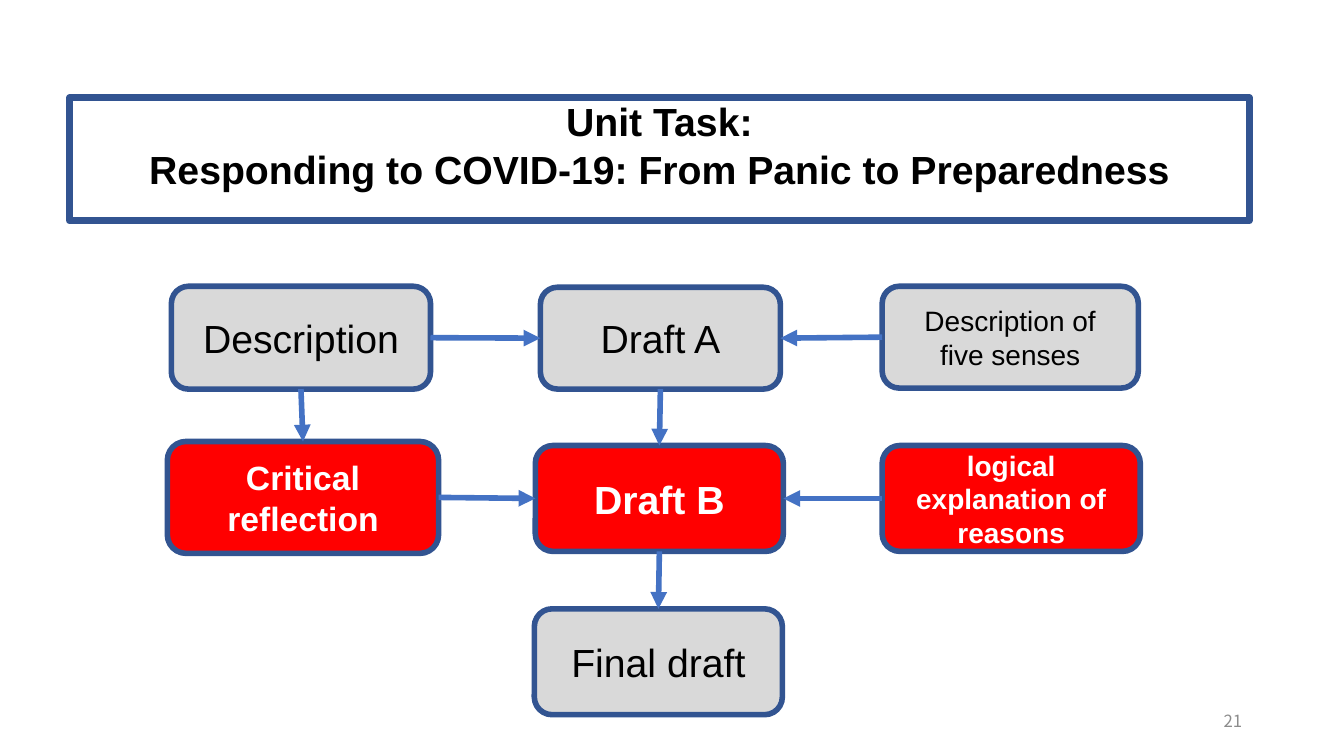
from lxml.etree import SubElement
from pptx import Presentation
from pptx.dml.color import RGBColor
from pptx.enum.shapes import MSO_CONNECTOR, MSO_SHAPE
from pptx.enum.text import MSO_ANCHOR, MSO_AUTO_SIZE, PP_ALIGN
from pptx.oxml.ns import qn
from pptx.util import Inches, Pt

WHITE = RGBColor(0xFF, 0xFF, 0xFF)
BLACK = RGBColor(0, 0, 0)
GREY = RGBColor(0xD9, 0xD9, 0xD9)
RED = RGBColor(0xFF, 0, 0)
NAVY = RGBColor(0x32, 0x54, 0x91)
BLUE = RGBColor(0x44, 0x72, 0xC4)
NUMBER_GREY = RGBColor(0x8C, 0x8C, 0x8C)
TOP, LEFT, BOTTOM, RIGHT = range(4)


def write(shape, text, size=28, color=BLACK, bold=False, font="Arial",
          align=PP_ALIGN.CENTER, anchor=MSO_ANCHOR.MIDDLE):
    frame = shape.text_frame
    frame.word_wrap = True
    frame.auto_size = MSO_AUTO_SIZE.NONE
    frame.vertical_anchor = anchor
    frame.text = text
    for paragraph in frame.paragraphs:
        paragraph.alignment = align
        paragraph.font.name = font
        paragraph.font.size = Pt(size)
        paragraph.font.bold = bold
        paragraph.font.color.rgb = color


class FlowSlide:
    def __init__(self, deck):
        self.slide = deck.slides.add_slide(deck.slide_layouts[5])
        self.shapes = self.slide.shapes

    def paint(self, shape, fill, width):
        shape.fill.solid()
        shape.fill.fore_color.rgb = fill
        shape.line.color.rgb = NAVY
        shape.line.width = Pt(width)

    def title(self, text, left, top, width, height):
        """Turn the title placeholder into a rounded, translucent banner."""
        banner = self.shapes.title
        banner.left, banner.top = Inches(left), Inches(top)
        banner.width, banner.height = Inches(width), Inches(height)
        properties = banner._element.spPr
        geometry = SubElement(properties, qn("a:prstGeom"), prst="roundRect")
        guides = SubElement(geometry, qn("a:avLst"))
        SubElement(guides, qn("a:gd"), name="adj", fmla="val 14500")
        self.paint(banner, WHITE, 5)
        tint = properties.find(qn("a:solidFill"))[0]
        SubElement(tint, qn("a:alpha"), val="41000")
        write(banner, text, bold=True, anchor=MSO_ANCHOR.TOP)
        banner.text_frame.margin_top = 0
        banner.text_frame.margin_bottom = Inches(0.31)

    def box(self, text, left, top, width, height, size=28, key=False):
        """Add a step of the flow; key steps are red with bold white text."""
        step = self.shapes.add_shape(
            MSO_SHAPE.ROUNDED_RECTANGLE,
            Inches(left), Inches(top), Inches(width), Inches(height))
        step.shadow.inherit = False
        self.paint(step, RED if key else GREY, 4)
        write(step, text, size=size, color=WHITE if key else BLACK, bold=key)
        return step

    def arrow(self, start, start_side, end, end_side):
        link = self.shapes.add_connector(MSO_CONNECTOR.STRAIGHT, 0, 0, 0, 0)
        link.begin_connect(start, start_side)
        link.end_connect(end, end_side)
        link.line.color.rgb = BLUE
        link.line.width = Pt(4)
        SubElement(link.line._get_or_add_ln(), qn("a:tailEnd"), type="triangle")
        SubElement(link._element.spPr, qn("a:effectLst"))

    def page_number(self, text, left, top, width, height):
        number = self.shapes.add_textbox(
            Inches(left), Inches(top), Inches(width), Inches(height))
        write(number, text, size=12, color=NUMBER_GREY,
              font="Noto Sans CJK SC", align=PP_ALIGN.RIGHT)


def main():
    deck = Presentation()
    deck.slide_width, deck.slide_height = Inches(13.33), Inches(7.5)
    flow = FlowSlide(deck)
    flow.title("Unit Task:\nResponding to COVID-19: From Panic to Preparedness",
               0.69, 0.97, 11.7, 1.22)

    description = flow.box("Description", 1.7, 2.84, 2.57, 1.02)
    draft_a = flow.box("Draft A", 5.36, 2.85, 2.38, 1.01)
    senses = flow.box("Description of\vfive senses", 8.75, 2.84, 2.54, 1.01,
                      size=20)
    reflection = flow.box("Critical reflection", 1.66, 4.38, 2.69, 1.11,
                          size=24, key=True)
    draft_b = flow.box("Draft B", 5.31, 4.42, 2.46, 1.05, key=True)
    reasons = flow.box("logical explanation of reasons", 8.75, 4.42, 2.56, 1.05,
                       size=20, key=True)
    final_draft = flow.box("Final draft", 5.3, 6.04, 2.46, 1.05)

    for source, draft, support in ((description, draft_a, senses),
                                   (reflection, draft_b, reasons)):
        flow.arrow(source, RIGHT, draft, LEFT)
        flow.arrow(support, LEFT, draft, RIGHT)
    for upper, lower in ((description, reflection), (draft_a, draft_b),
                         (draft_b, final_draft)):
        flow.arrow(upper, BOTTOM, lower, TOP)

    flow.page_number("21", 9.42, 6.95, 3, 0.4)
    deck.save("out.pptx")


if __name__ == "__main__":
    main()
